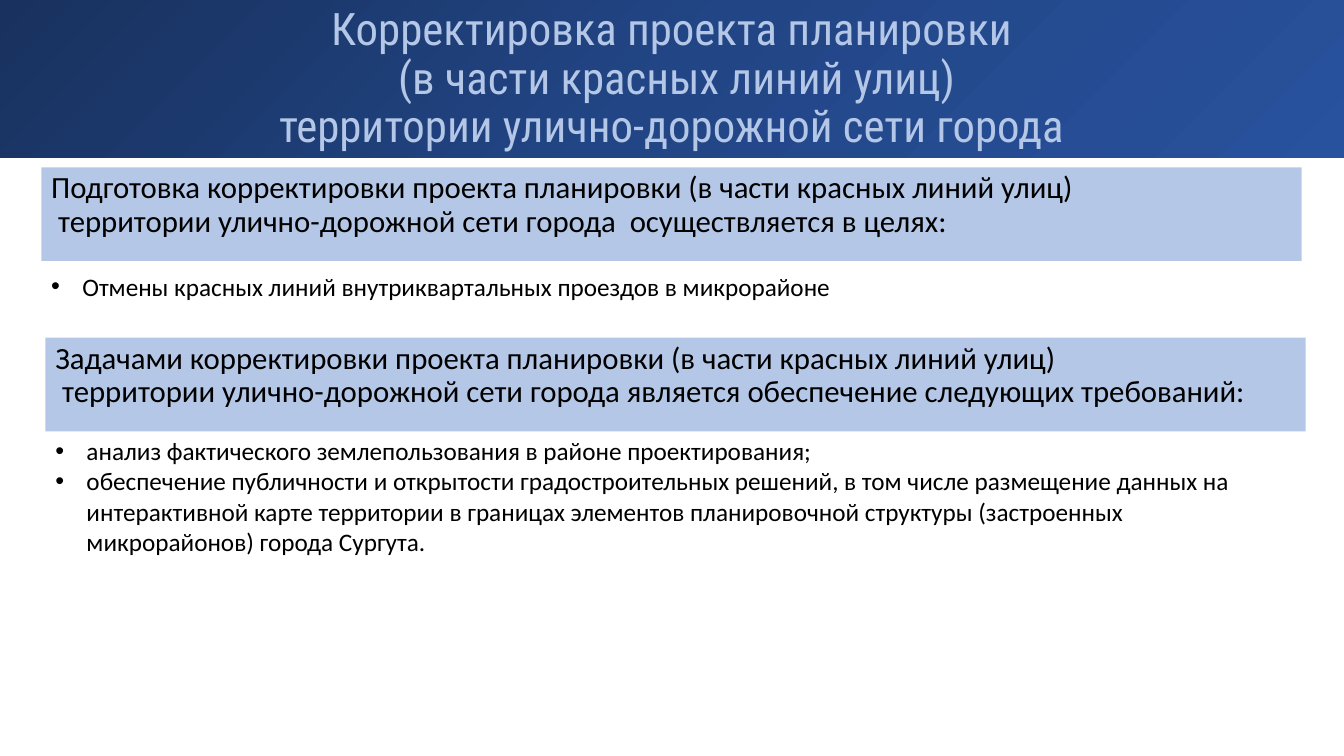
import copy
import pptx
import pptx.util
import pptx.dml.color
import pptx.enum.shapes
import pptx.enum.text
import pptx.oxml
import pptx.oxml.ns

Inches = pptx.util.Inches
Pt = pptx.util.Pt
ALIGN = pptx.enum.text.PP_ALIGN
ANCHOR = pptx.enum.text.MSO_ANCHOR

COLORS = {"dark": "18315E", "mid": "224585", "light": "28529E",
          "pale": "B4C7E7", "text": "000000"}
STOPS = [(0, "dark"), (0.5, "mid"), (1, "light")]

TITLE = ["Корректировка проекта планировки",
         " (в части красных линий улиц)",
         "территории улично-дорожной сети города"]

PARTS = [
    {"left": 0.41, "top": 1.66, "list": 2.64, "high": 0.4,
     "head": ["Подготовка корректировки проекта планировки (в части красных линий улиц)",
              " территории улично-дорожной сети города  осуществляется в целях:"],
     "items": ["Отмены красных линий внутриквартальных проездов в микрорайоне"]},
    {"left": 0.45, "top": 3.35, "list": 4.27, "high": 1.31,
     "head": ["Задачами корректировки проекта планировки (в части красных линий улиц)",
              " территории улично-дорожной сети города является обеспечение следующих требований:"],
     "items": ["анализ фактического землепользования в районе проектирования;",
               "обеспечение публичности и открытости градостроительных решений, "
               "в том числе размещение данных на интерактивной карте территории "
               "в границах элементов планировочной структуры (застроенных "
               "микрорайонов) города Сургута."]},
]
WIDTH, HEAD = 12.5, 0.93


def color(name):
    return pptx.dml.color.RGBColor.from_string(COLORS[name])


def write(para, lines, size, face, tone):
    for i, line in enumerate(lines):
        if i:
            para.add_line_break()
        run = para.add_run()
        run.text = line
        run.font.size = Pt(size)
        run.font.name = face
        run.font.color.rgb = color(tone)


def block(slide, place, lines, size, face, tone, align, anchor):
    shape = slide.shapes.add_shape(pptx.enum.shapes.MSO_SHAPE.RECTANGLE,
                                   *map(Inches, place))
    shape.shadow.inherit = False
    shape.line.fill.background()
    frame = shape.text_frame
    frame.word_wrap = True
    frame.vertical_anchor = anchor
    para = frame.paragraphs[0]
    para.alignment = align
    para.line_spacing = 0.9
    write(para, lines, size, face, tone)
    return shape


def shade(fill):
    fill.gradient()
    fill.gradient_angle = 315
    stops = fill.gradient_stops
    first = stops[0]
    first.color.rgb = color("dark")
    row = fill._xPr.find(pptx.oxml.ns.qn("a:gradFill")).gsLst
    row.insert(1, copy.deepcopy(row[0]))
    for stop, (pos, name) in zip(fill.gradient_stops, STOPS):
        stop.position = pos
        stop.color.rgb = color(name)


def bullets(slide, place, items):
    frame = slide.shapes.add_textbox(*map(Inches, place)).text_frame
    frame.word_wrap = True
    for i, item in enumerate(items):
        para = frame.add_paragraph() if i else frame.paragraphs[0]
        props = para._p.get_or_add_pPr()
        props.set("marL", str(Inches(0.31)))
        props.set("indent", str(Inches(-0.31)))
        for tag, key, value in (("buFont", "typeface", "Arial"),
                                ("buChar", "char", "•")):
            mark = pptx.oxml.parse_xml(
                f'<a:{tag} {pptx.oxml.ns.nsdecls("a")} {key}="{value}"/>')
            props.append(mark)
        write(para, [item], 18, "Calibri", "text")


def main():
    deck = pptx.Presentation()
    deck.slide_width = Inches(13.33)
    deck.slide_height = Inches(7.5)
    slide = deck.slides.add_slide(deck.slide_layouts[6])
    title = block(slide, (0, 0, 13.33, 1.56), TITLE, 32, "Roboto Condensed",
                  "pale", ALIGN.CENTER, ANCHOR.BOTTOM)
    shade(title.fill)
    for part in PARTS:
        left = part["left"]
        head = block(slide, (left, part["top"], WIDTH, HEAD), part["head"], 22,
                     "Calibri", "text", ALIGN.LEFT, ANCHOR.TOP)
        head.fill.solid()
        head.fill.fore_color.rgb = color("pale")
        bullets(slide, (left, part["list"], WIDTH, part["high"]), part["items"])
    deck.save("out.pptx")


if __name__ == "__main__":
    main()
